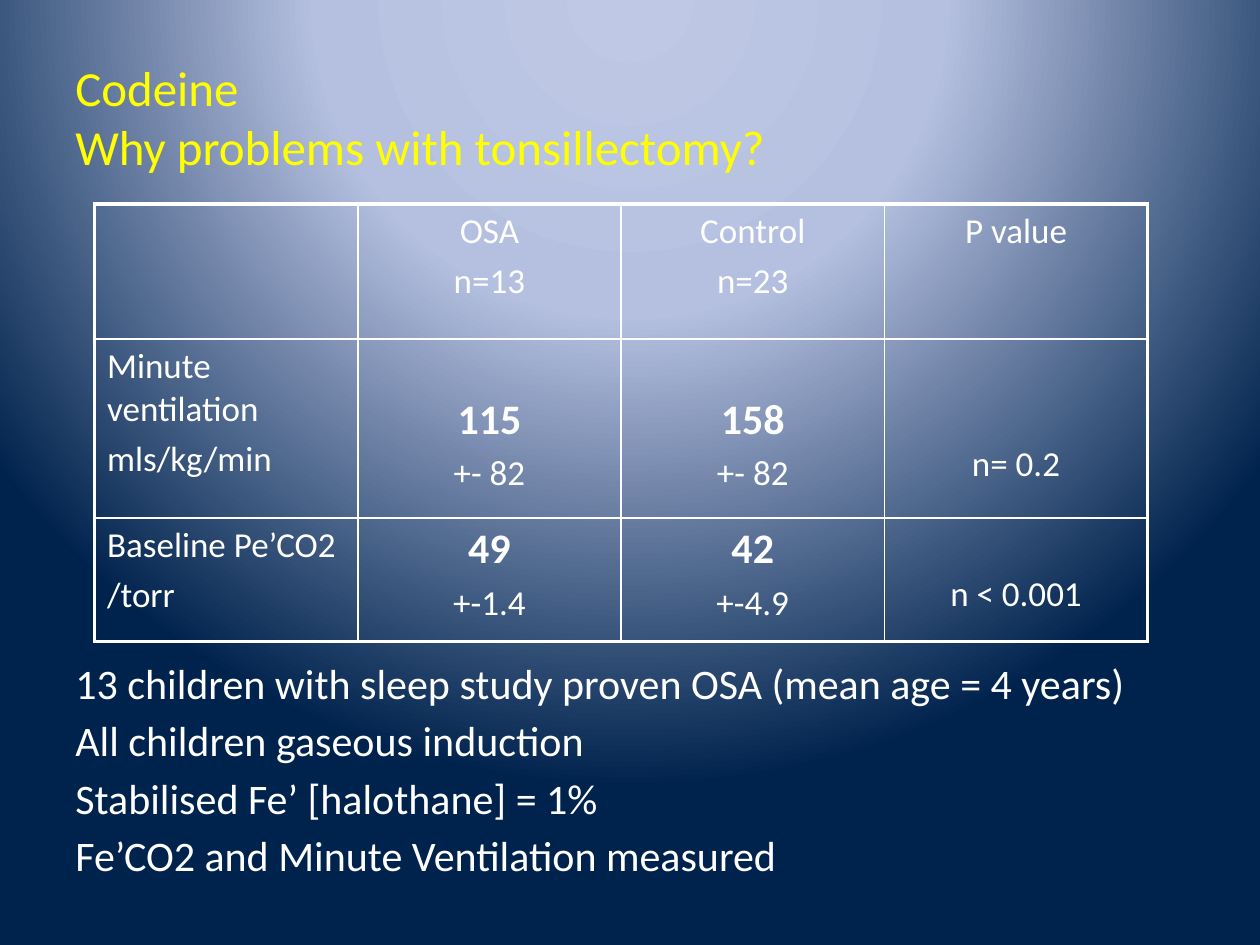
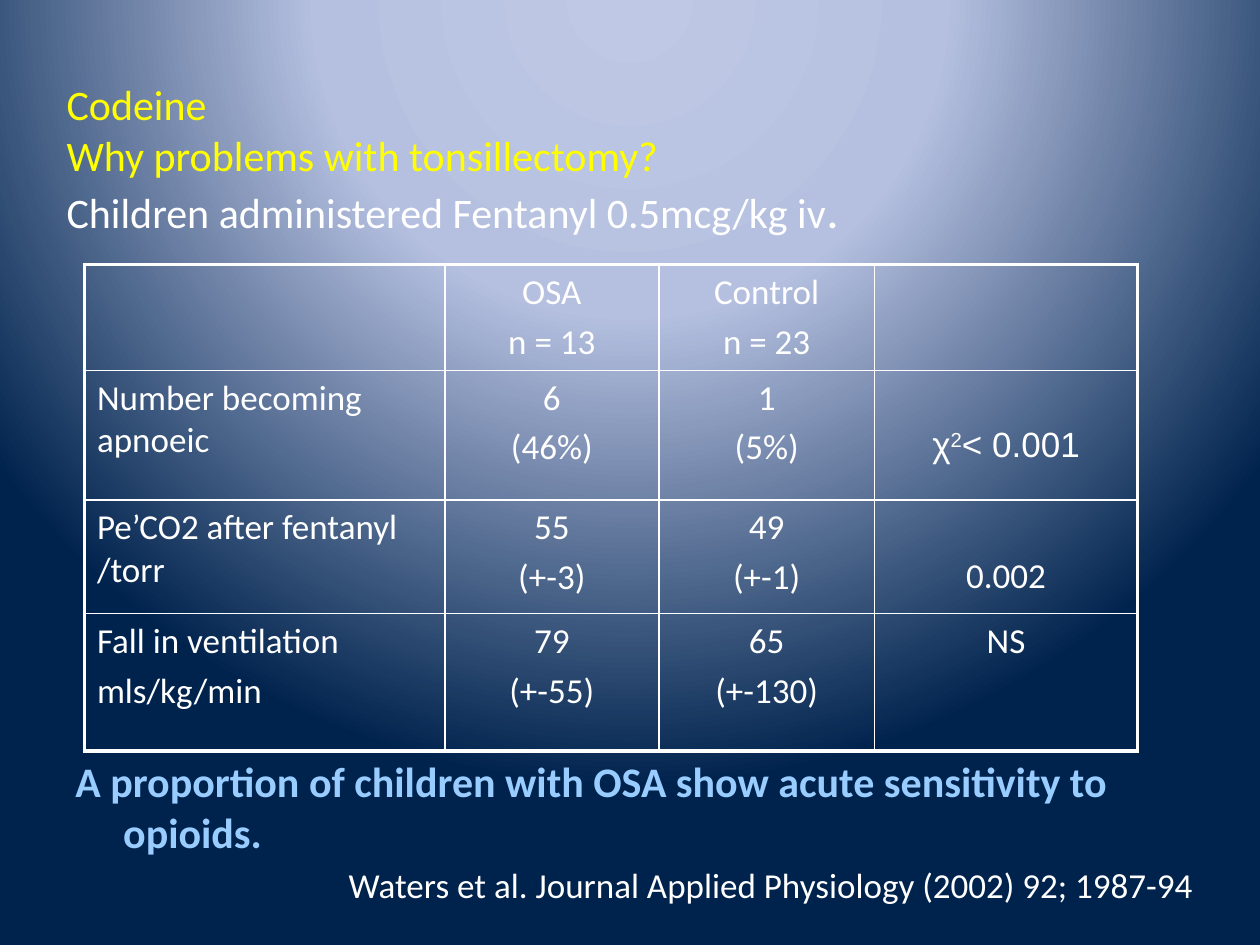
"""Builds two slides on codeine, sleep apnoea and tonsillectomy."""
from dataclasses import dataclass

from pptx import Presentation
from pptx.dml.color import RGBColor
from pptx.enum.text import MSO_ANCHOR, PP_ALIGN
from pptx.oxml import parse_xml
from pptx.oxml.ns import nsdecls, qn
from pptx.util import Inches, Pt


@dataclass(frozen=True)
class Theme:
    """Colours, fonts and sizes that the slides share."""
    font: str = "Calibri"
    symbol_font: str = "Arial"
    white: str = "FFFFFF"
    title: str = "FFFF00"
    accent: str = "99CCFF"
    glow: tuple = ((0, "BFC9E5"), (40, "B5C0E0"), (100, "00234D"))
    large: int = 28
    medium: int = 24
    small: int = 20
    gap: int = 4
    frame: float = 2.25
    rule: float = 1
    hang: float = 0.38
    cell_margin: float = 0.05
    skipped_line: float = 0.39


THEME = Theme()


@dataclass(frozen=True)
class Span:
    """A stretch of text in one format."""
    text: str
    size: int = THEME.small
    color: str = THEME.white
    bold: bool = False
    font: str = THEME.font
    raised: bool = False


@dataclass(frozen=True)
class Cell:
    """Lines of a table cell, set a number of lines below its top."""
    lines: tuple = ()
    skip: int = 0


def cell(*lines, skip=0):
    """Return a cell whose plain strings are small white text."""
    return Cell(tuple([Span(line)] if isinstance(line, str) else line for line in lines), skip)


def measured(value, spread, skip=0):
    """Return a cell with a bold value above its spread."""
    return cell([Span(value, THEME.medium, bold=True)], spread, skip=skip)


def add_spans(para, spans):
    """Write formatted spans into a paragraph."""
    for item in spans:
        span = para.add_run()
        span.text = item.text
        formats = {"size": Pt(item.size), "bold": item.bold, "name": item.font}
        for name, value in formats.items():
            setattr(span.font, name, value)
        span.font.color.rgb = RGBColor.from_string(item.color)
        if item.raised:
            span.font._element.set("baseline", "30000")


def add_paragraphs(frame, lines, alignments):
    """Fill a text frame with one paragraph for each line."""
    for index, (spans, alignment) in enumerate(zip(lines, alignments)):
        para = frame.add_paragraph() if index else frame.paragraphs[0]
        para.alignment = alignment
        para.space_before = Pt(THEME.gap)
        add_spans(para, spans)


def add_box(page, left, top, width, height, anchor=MSO_ANCHOR.TOP):
    """Add a wrapping text box and return its frame."""
    box = page.shapes.add_textbox(*map(Inches, (left, top, width, height)))
    for name, value in {"word_wrap": True, "vertical_anchor": anchor}.items():
        setattr(box.text_frame, name, value)
    return box.text_frame


def add_title(page, place, size, subtitle=()):
    """Add the shared two-line title with an optional subtitle line."""
    para = add_box(page, *place, MSO_ANCHOR.MIDDLE).paragraphs[0]
    lines = [[Span(text, size, THEME.title)]
             for text in ("Codeine", "Why problems with tonsillectomy?")]
    if subtitle:
        lines.append(subtitle)
    for index, spans in enumerate(lines):
        if index:
            para.add_line_break()
        add_spans(para, spans)


def add_body(page, place, lines, alignments):
    """Add body text with hanging indents."""
    frame = add_box(page, *place)
    add_paragraphs(frame, lines, alignments)
    for para in frame.paragraphs:
        properties = para._p.get_or_add_pPr()
        properties.set("marL", str(Inches(THEME.hang)))
        properties.set("indent", str(-Inches(THEME.hang)))


def set_borders(target, outer_sides):
    """Draw the cell's borders, heavier on the outer sides of the table."""
    properties = target._tc.get_or_add_tcPr()
    for index, side in enumerate("LRTB"):
        width = Pt(THEME.frame if side in outer_sides else THEME.rule)
        properties.insert(index, parse_xml(
            f'<a:ln{side} {nsdecls("a")} w="{width}"><a:solidFill>'
            f'<a:srgbClr val="{THEME.white}"/></a:solidFill></a:ln{side}>'))


def add_results(page, left, top, widths, heights, rows):
    """Add a framed, unfilled results table."""
    table = page.shapes.add_table(
        len(heights), len(widths), Inches(left), Inches(top),
        Inches(sum(widths)), Inches(sum(heights))).table
    for name in ("first_row", "horz_banding"):
        setattr(table, name, False)
    for column, width in zip(table.columns, widths):
        column.width = Inches(width)
    for row, height in zip(table.rows, heights):
        row.height = Inches(height)
    last_row, last_column = len(heights) - 1, len(widths) - 1
    for r, row in enumerate(rows):
        for c, content in enumerate(row):
            target = table.cell(r, c)
            target.fill.background()
            target.margin_top = Inches(THEME.cell_margin + content.skip * THEME.skipped_line)
            alignment = PP_ALIGN.CENTER if c else PP_ALIGN.LEFT
            add_paragraphs(target.text_frame, content.lines, [alignment] * len(content.lines))
            edges = {"L": c == 0, "R": c == last_column, "T": r == 0, "B": r == last_row}
            set_borders(target, [side for side, outer in edges.items() if outer])


def set_background(deck):
    """Give the slide master a circular glow from above."""
    background = deck.slide_master.background
    background.fill.solid()
    properties = deck.slide_master._element.find(".//" + qn("p:bgPr"))
    stops = "".join(f'<a:gs pos="{position * 1000}"><a:srgbClr val="{color}"/></a:gs>'
                    for position, color in THEME.glow)
    properties.replace(properties[0], parse_xml(
        f'<a:gradFill {nsdecls("a")} rotWithShape="1"><a:gsLst>{stops}</a:gsLst>'
        '<a:path path="circle"><a:fillToRect l="50000" t="-80000" r="50000" b="180000"/>'
        '</a:path></a:gradFill>'))


def build_baseline(page):
    """Build the slide with baseline measurements."""
    add_title(page, (0.5, 0.3, 9, 1.25), THEME.large)
    notes = ("13 children with sleep study proven OSA (mean age = 4 years)",
             "All children gaseous induction",
             "Stabilised Fe’ [halothane] = 1%",
             "Fe’CO2 and Minute Ventilation measured")
    add_body(page, (0.5, 5.17, 8.99, 1.97),
             [[Span(note, THEME.medium)] for note in notes], [PP_ALIGN.LEFT] * len(notes))
    add_results(page, 0.75, 1.62, [2.09] * 4, [1.07, 1.42, 0.98], [
        [cell(), cell("OSA", "n=13"), cell("Control", "n=23"), cell("P value")],
        [cell("Minute ventilation", "mls/kg/min"), measured("115", "+- 82", skip=1),
         measured("158", "+- 82", skip=1), cell("n= 0.2", skip=2)],
        [cell("Baseline Pe’CO2", "/torr"), measured("49", "+-1.4"),
         measured("42", "+-4.9"), cell("n < 0.001", skip=1)],
    ])


def build_fentanyl(page):
    """Build the slide with the response to fentanyl."""
    add_title(page, (0.43, 0.44, 9, 1.64), THEME.medium, [
        Span("Children administered Fentanyl 0.5mcg/kg iv", THEME.medium),
        Span(".", THEME.large)])
    add_body(page, (0.5, 5.95, 9.07, 1.26), [
        [Span("A proportion of children with OSA show acute sensitivity to opioids.",
              THEME.medium, THEME.accent, bold=True)],
        [Span("Waters et al. Journal Applied Physiology (2002) 92; 1987-94")],
    ], [PP_ALIGN.LEFT, PP_ALIGN.RIGHT])
    chi_squared = [Span("χ", font=THEME.symbol_font),
                   Span("2", font=THEME.symbol_font, raised=True),
                   Span("< 0.001", font=THEME.symbol_font)]
    add_results(page, 0.67, 2.1, [2.86, 1.7, 1.71, 2.09], [0.84, 1.03, 0.9, 1.09], [
        [cell(), cell("OSA", "n = 13"), cell("Control", "n = 23"), cell()],
        [cell("Number becoming apnoeic"), cell("6", "(46%)"), cell("1", "(5%)"),
         cell(chi_squared, skip=1)],
        [cell("Pe’CO2 after fentanyl /torr"), cell("55", "(+-3)"), cell("49", "(+-1)"),
         cell("0.002", skip=1)],
        [cell("Fall in ventilation", "mls/kg/min"), cell("79", "(+-55)"),
         cell("65", "(+-130)"), cell("NS")],
    ])


def main():
    """Build and save the deck."""
    deck = Presentation()
    deck.slide_width, deck.slide_height = Inches(10), Inches(7.5)
    set_background(deck)
    for build in (build_baseline, build_fentanyl):
        build(deck.slides.add_slide(deck.slide_layouts[6]))
    deck.save("out.pptx")


if __name__ == "__main__":
    main()
